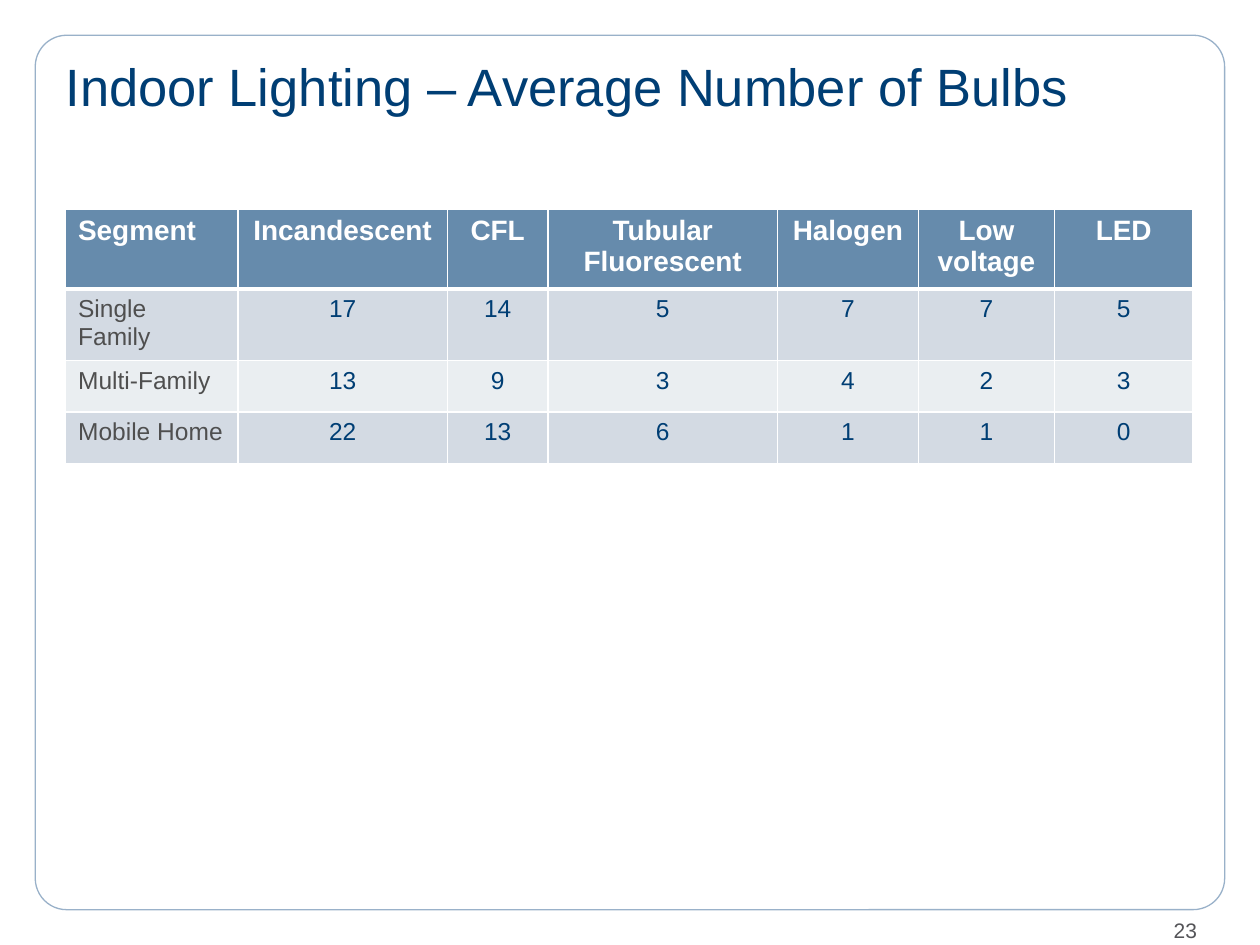
from dataclasses import dataclass

import pptx
import pptx.dml.color
import pptx.enum.shapes
import pptx.enum.text
import pptx.oxml
import pptx.oxml.ns
import pptx.util
from pptx.util import Inches

RGBColor = pptx.dml.color.RGBColor
ALIGN = pptx.enum.text.PP_ALIGN
ANCHOR = pptx.enum.text.MSO_ANCHOR

NAVY = RGBColor(0x00, 0x3E, 0x74)
WHITE = RGBColor(0xFF, 0xFF, 0xFF)
HEADER_BLUE = RGBColor(0x66, 0x8B, 0xAC)
BAND_DARK = RGBColor(0xD3, 0xDA, 0xE3)
BAND_LIGHT = RGBColor(0xEA, 0xEE, 0xF1)
LABEL_GRAY = RGBColor(0x4F, 0x4F, 0x4F)
NUMBER_GRAY = RGBColor(0x54, 0x54, 0x58)
FRAME_BLUE = RGBColor(0x99, 0xB1, 0xC9)


@dataclass
class Column:
    heading: str
    width: float
    values: tuple


COLUMNS = [
    Column("Segment", 1.37, ("Single Family", "Multi-Family", "Mobile Home")),
    Column("Incandescent", 1.66, (17, 13, 22)),
    Column("CFL", 0.8, (14, 9, 13)),
    Column("Tubular Fluorescent", 1.82, (5, 3, 6)),
    Column("Halogen", 1.12, (7, 4, 1)),
    Column("Low voltage", 1.08, (7, 2, 1)),
    Column("LED", 1.1, (5, 3, 0)),
]
HEADER_HEIGHT = 0.63
ROW_HEIGHT = 0.41


def set_text(tf, text: str, *, size: float, color: RGBColor, bold: bool = False,
             align=ALIGN.LEFT) -> None:
    p = tf.paragraphs[0]
    p.alignment = align
    r = p.add_run()
    r.text = text
    r.font.name = "Arial"
    r.font.size = pptx.util.Pt(size)
    r.font.bold = bold
    r.font.color.rgb = color


def clear_insets(tf) -> None:
    tf.margin_left = tf.margin_right = tf.margin_top = tf.margin_bottom = 0
    tf.vertical_anchor = ANCHOR.MIDDLE
    tf.word_wrap = True


def set_borders(cell, top: float, bottom: float) -> None:
    tc_pr = cell._tc.get_or_add_tcPr()
    for side, width in (("L", 1), ("R", 1), ("T", top), ("B", bottom)):
        tc_pr.append(pptx.oxml.parse_xml(
            f'<a:ln{side} {pptx.oxml.ns.nsdecls("a")} w="{pptx.util.Pt(width)}">'
            f'<a:solidFill><a:srgbClr val="{WHITE}"/></a:solidFill></a:ln{side}>'))


def format_cell(cell, text: str, row: int, col: int) -> None:
    header = row == 0
    set_borders(cell, top=3 if row == 1 else 1, bottom=3 if header else 1)
    cell.fill.solid()
    if header:
        cell.fill.fore_color.rgb = HEADER_BLUE
        color = WHITE
    else:
        cell.fill.fore_color.rgb = BAND_DARK if row % 2 else BAND_LIGHT
        color = NAVY if col else LABEL_GRAY
    set_text(cell.text_frame, text, size=16 if header else 14, color=color,
             bold=header, align=ALIGN.CENTER if col else ALIGN.LEFT)


def add_bulb_table(s, left: float, top: float) -> None:
    rows = 1 + len(COLUMNS[0].values)
    width = sum(c.width for c in COLUMNS)
    height = HEADER_HEIGHT + ROW_HEIGHT * (rows - 1)
    table = s.shapes.add_table(rows, len(COLUMNS), Inches(left), Inches(top),
                               Inches(width), Inches(height)).table
    for i in range(rows):
        table.rows[i].height = Inches(ROW_HEIGHT if i else HEADER_HEIGHT)
    for j, column in enumerate(COLUMNS):
        table.columns[j].width = Inches(column.width)
        for i, value in enumerate((column.heading, *column.values)):
            format_cell(table.cell(i, j), str(value), i, j)


def main() -> None:
    prs = pptx.Presentation()
    prs.slide_width, prs.slide_height = Inches(10), Inches(7.5)
    s = prs.slides.add_slide(prs.slide_layouts[5])

    # Rounded frame
    sp = s.shapes.add_shape(pptx.enum.shapes.MSO_SHAPE.ROUNDED_RECTANGLE,
                            Inches(0.28), Inches(0.28), Inches(9.44), Inches(6.94))
    sp.adjustments[0] = 0.036
    sp.shadow.inherit = False
    sp.fill.background()
    sp.line.color.rgb = FRAME_BLUE
    sp.line.width = pptx.util.Pt(0.75)

    # Page number
    number = s.shapes.add_textbox(Inches(8.1), Inches(7.27), Inches(1.4), Inches(0.23))
    clear_insets(number.text_frame)
    set_text(number.text_frame, "23", size=12, color=NUMBER_GRAY, align=ALIGN.RIGHT)

    # Table of bulb counts
    add_bulb_table(s, 0.52, 1.66)

    # Title
    title = s.shapes.title
    title.left, title.top = Inches(0.52), Inches(0.4)
    title.width, title.height = Inches(8.86), Inches(0.55)
    clear_insets(title.text_frame)
    set_text(title.text_frame, "Indoor Lighting – Average Number of Bulbs",
             size=30, color=NAVY)

    prs.save("out.pptx")


if __name__ == "__main__":
    main()
